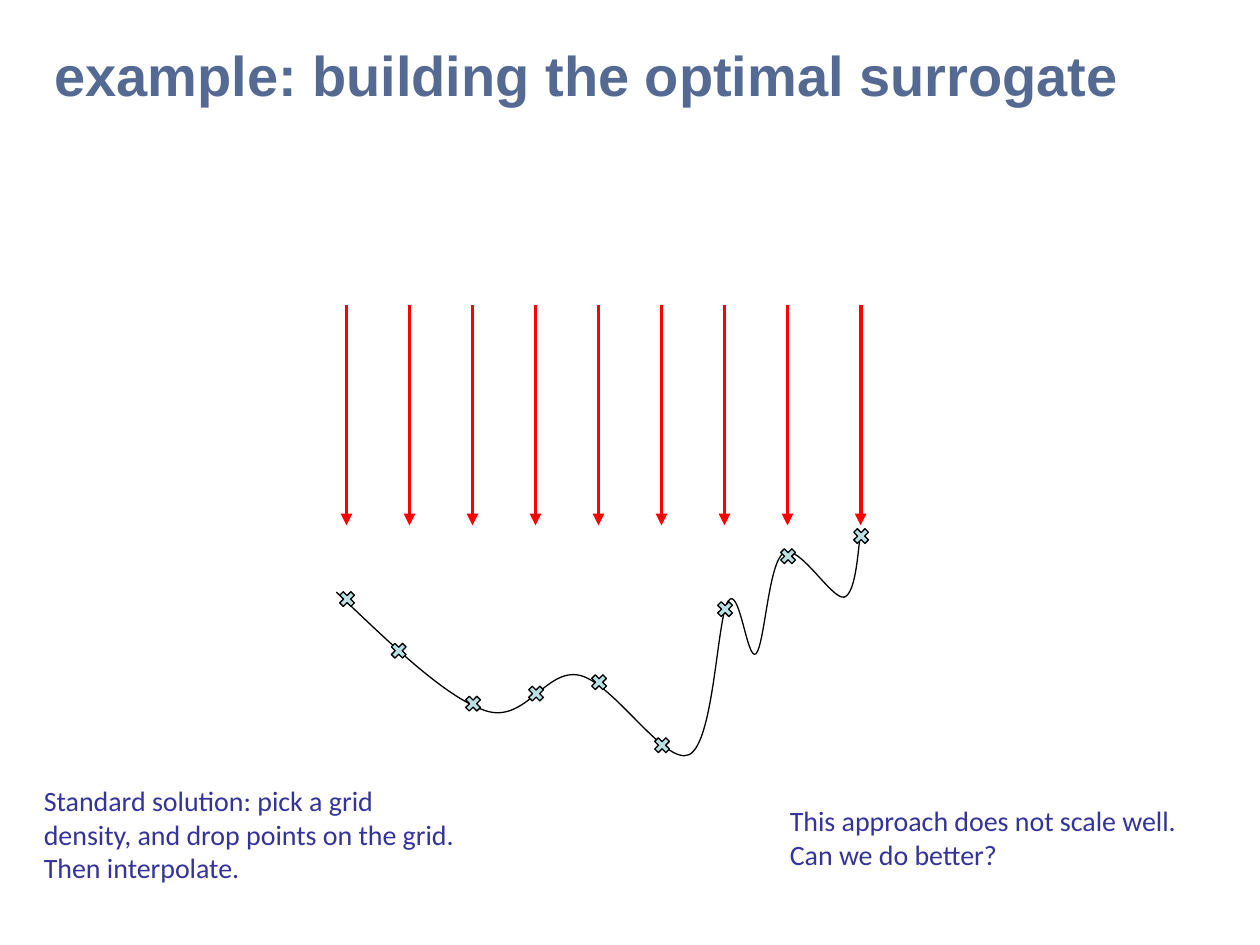
import lxml.etree
import pptx
import pptx.dml.color
import pptx.enum.shapes
import pptx.enum.text
import pptx.oxml.ns
import pptx.util
from pptx.oxml.ns import qn
from pptx.util import Inches

COLORS = {
    "title": "556A92",
    "note": "333399",
    "curve": "000000",
    "marker": "BBE0E3",
    "arrow": "FF0000",
}

# Cubic pieces of the curve: two control points and an end point each
CURVE_START = (2.67, 4.70)
CURVE_PIECES = [
    ((3.10, 5.11), (3.53, 5.53), (3.85, 5.64)),
    ((4.17, 5.75), (4.33, 5.30), (4.60, 5.36)),
    ((4.87, 5.42), (5.28, 6.08), (5.47, 5.99)),
    ((5.67, 5.89), (5.69, 4.90), (5.78, 4.77)),
    ((5.87, 4.64), (5.93, 5.25), (6.00, 5.19)),
    ((6.07, 5.12), (6.10, 4.46), (6.22, 4.39)),
    ((6.34, 4.31), (6.60, 4.76), (6.70, 4.74)),
    ((6.80, 4.71), (6.81, 4.33), (6.83, 4.25)),
]
# Left and top of each sampled point's marker
MARKER_CORNERS = [
    (3.08, 5.08), (3.67, 5.50), (4.17, 5.42), (4.67, 5.33), (5.17, 5.83),
    (5.67, 4.75), (6.17, 4.33), (2.67, 4.67), (6.75, 4.17),
]
GRID_XS = [2.75 + 0.5 * step for step in range(7)] + [6.83, 6.25]


def rgb(name):
    return pptx.dml.color.RGBColor.from_string(COLORS[name])


def format_text(frame, text, font, size, color, bold=False):
    """Fill the frame with one left-aligned paragraph per line of text."""
    frame.text = text
    for para in frame.paragraphs:
        para.alignment = pptx.enum.text.PP_ALIGN.LEFT
        for span in para.runs:
            span.font.name = font
            span.font.size = pptx.util.Pt(size)
            span.font.bold = bold
            span.font.color.rgb = rgb(color)


def bend_segments(shape):
    """Turn every three line segments of a freeform into one cubic curve."""
    lines = list(shape._element.iter(qn("a:lnTo")))
    for first, second, last in zip(lines[::3], lines[1::3], lines[2::3]):
        first.tag = qn("a:cubicBezTo")
        for line in (second, last):
            first.append(line[0])
            line.getparent().remove(line)


class SlideBuilder:
    def __init__(self, page, thin=0.75, thick=2.25):
        self.page = page
        self.thin = pptx.util.Pt(thin)
        self.thick = pptx.util.Pt(thick)

    def title(self, text, left, top, width, height):
        box = self.page.shapes.title
        box.left, box.top = Inches(left), Inches(top)
        box.width, box.height = Inches(width), Inches(height)
        frame = box.text_frame
        frame.auto_size = pptx.enum.text.MSO_AUTO_SIZE.NONE
        frame.vertical_anchor = pptx.enum.text.MSO_ANCHOR.MIDDLE
        format_text(frame, text, font="Arial", size=32, color="title", bold=True)

    def note(self, text, left, top, width, height):
        box = self.page.shapes.add_textbox(
            Inches(left), Inches(top), Inches(width), Inches(height))
        frame = box.text_frame
        frame.word_wrap = True
        frame.auto_size = pptx.enum.text.MSO_AUTO_SIZE.SHAPE_TO_FIT_TEXT
        format_text(frame, text, font="Calibri", size=16, color="note")

    def outline(self, shape):
        shape.shadow.inherit = False
        shape.line.color.rgb = rgb("curve")
        shape.line.width = self.thin

    def curve(self, start, pieces):
        builder = self.page.shapes.build_freeform(
            Inches(start[0]), Inches(start[1]))
        builder.add_line_segments(
            [(Inches(x), Inches(y)) for piece in pieces for x, y in piece],
            close=False)
        shape = builder.convert_to_shape()
        bend_segments(shape)
        shape.fill.background()
        self.outline(shape)

    def marker(self, left, top, size=0.17):
        shape = self.page.shapes.add_shape(
            pptx.enum.shapes.MSO_SHAPE.MATH_MULTIPLY,
            Inches(left), Inches(top), Inches(size), Inches(size))
        shape.fill.solid()
        shape.fill.fore_color.rgb = rgb("marker")
        self.outline(shape)

    def down_arrow(self, x, top, bottom):
        arrow = self.page.shapes.add_connector(
            pptx.enum.shapes.MSO_CONNECTOR.STRAIGHT,
            Inches(x), Inches(top), Inches(x), Inches(bottom))
        arrow.line.color.rgb = rgb("arrow")
        arrow.line.width = self.thick
        lxml.etree.SubElement(arrow.line._ln, qn("a:tailEnd"), type="triangle")
        lxml.etree.SubElement(arrow._element.spPr, qn("a:effectLst"))


def main():
    deck = pptx.Presentation()
    deck.slide_width, deck.slide_height = Inches(10), Inches(7.5)
    title_only = deck.slide_layouts[5]
    slide = SlideBuilder(deck.slides.add_slide(title_only))

    slide.title("example: building the optimal surrogate", 0.33, 0.17, 9.5, 0.83)
    slide.curve(CURVE_START, CURVE_PIECES)
    for left, top in MARKER_CORNERS:
        slide.marker(left, top)
    for x in GRID_XS:
        slide.down_arrow(x, top=2.42, bottom=4.17)
    slide.note(
        "Standard solution: pick a grid density, and drop points on the grid.\n"
        "Then interpolate.", 0.25, 6.17, 3.5, 0.91)
    slide.note(
        "This approach does not scale well.\nCan we do better?",
        6.17, 6.33, 3.42, 0.64)

    deck.save("out.pptx")


if __name__ == "__main__":
    main()
